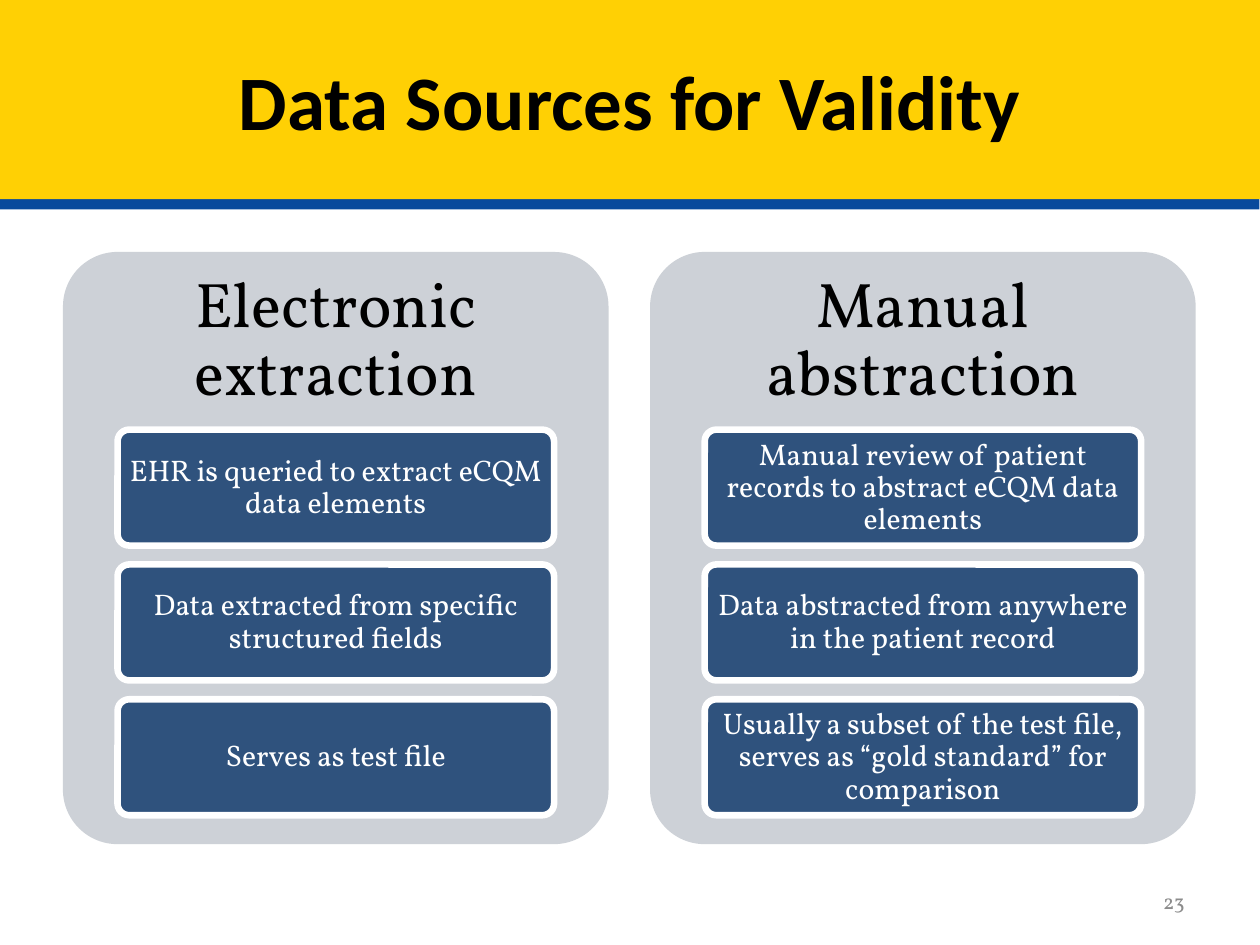
from dataclasses import dataclass

from lxml import etree
from pptx import Presentation
from pptx.dml.color import RGBColor
from pptx.enum.shapes import MSO_SHAPE
from pptx.enum.text import MSO_ANCHOR, PP_ALIGN
from pptx.oxml.ns import qn
from pptx.util import Inches, Pt

ROUND = MSO_SHAPE.ROUNDED_RECTANGLE
MIDDLE = MSO_ANCHOR.MIDDLE
CENTER, RIGHT = PP_ALIGN.CENTER, PP_ALIGN.RIGHT


@dataclass(frozen=True)
class Theme:
    gold: str = "FFD004"
    blue: str = "084A9C"
    panel: str = "CDD1D7"
    card: str = "2F527D"
    black: str = "000000"
    white: str = "FFFFFF"
    gray: str = "8C8C8C"
    head: str = "Calibri"
    body: str = "Vollkorn"
    title: int = 44
    group: int = 36
    item: int = 17
    number: int = 12


@dataclass(frozen=True)
class Box:
    """A rectangle in inches."""
    x: float
    y: float
    w: float
    h: float

    def place(self) -> list:
        return [Inches(v) for v in (self.x, self.y, self.w, self.h)]


@dataclass(frozen=True)
class Group:
    head: str
    items: tuple


THEME = Theme()
WIDE, HIGH = 10, 7.5
BAND = Box(0, 0, WIDE, 1.58)
PANEL = Box(0.5, 2, 4.33, 4.7)
HEAD = 0.3 * PANEL.h
INDENT = 0.1 * PANEL.w
CARD_W = 0.8 * PANEL.w
CARD_H = 0.92
COL_STEP = 4.66
ROW_STEP = 1.07

GROUPS = (
    Group("Electronic extraction", (
        "EHR is queried to extract eCQM data elements",
        "Data extracted from specific structured fields",
        "Serves as test file")),
    Group("Manual abstraction", (
        "Manual review of patient records to abstract eCQM data elements",
        "Data abstracted from anywhere in the patient record",
        "Usually a subset of the test file, serves as “gold standard” "
        "for comparison")),
)


def write(shape, text: str, size: int, color: str, face: str = THEME.body,
          align=CENTER, pad: tuple = (0.1, 0.05), space: float = 1,
          bold: bool = False) -> None:
    frame = shape.text_frame
    frame.word_wrap = True
    frame.vertical_anchor = MIDDLE
    frame.margin_left = frame.margin_right = Inches(pad[0])
    frame.margin_top = frame.margin_bottom = Inches(pad[1])
    frame.text = text
    line = frame.paragraphs[0]
    line.alignment = align
    line.line_spacing = space
    line.font.name = face
    line.font.size = Pt(size)
    line.font.bold = bold
    line.font.color.rgb = RGBColor.from_string(color)


def paint(shape, color: str) -> None:
    shape.fill.solid()
    shape.fill.fore_color.rgb = RGBColor.from_string(color)


def add_round(slide, box: Box, color: str):
    shape = slide.shapes.add_shape(ROUND, *box.place())
    shape.adjustments[0] = 0.1
    shape.shadow.inherit = False
    paint(shape, color)
    shape.line.fill.background()
    return shape


def add_edge(shape, color: str) -> None:
    """Add a hard shadow that shows as a strip below the shape."""
    props = shape._element.spPr
    effects = etree.SubElement(props, qn("a:effectLst"))
    shadow = etree.SubElement(effects, qn("a:outerShdw"), blurRad="0",
                              dist=str(Pt(6)), dir=str(94 * 60000),
                              algn="t", rotWithShape="0")
    etree.SubElement(shadow, qn("a:srgbClr"), val=color)


def add_title(slide, text: str) -> None:
    title = slide.shapes.title
    title.left, title.top, title.width, title.height = BAND.place()
    paint(title, THEME.gold)
    add_edge(title, THEME.blue)
    write(title, text, THEME.title, THEME.black, THEME.head, bold=True)


def add_card(slide, box: Box, text: str) -> None:
    card = add_round(slide, box, THEME.card)
    card.line.color.rgb = RGBColor.from_string(THEME.white)
    card.line.width = Pt(3.78)
    write(card, text, THEME.item, THEME.white, pad=(0.05, 0.04), space=0.9)


def add_group(slide, col: int, group: Group) -> None:
    left = PANEL.x + col * COL_STEP
    add_round(slide, Box(left, PANEL.y, PANEL.w, PANEL.h), THEME.panel)
    head = slide.shapes.add_textbox(
        *Box(left, PANEL.y, PANEL.w, HEAD).place())
    write(head, group.head, THEME.group, THEME.black,
          pad=(0.15, 0.15), space=0.9)
    for row, text in enumerate(group.items):
        top = PANEL.y + HEAD + row * ROW_STEP
        add_card(slide, Box(left + INDENT, top, CARD_W, CARD_H), text)


def main() -> None:
    deck = Presentation()
    deck.slide_width, deck.slide_height = Inches(WIDE), Inches(HIGH)
    slide = deck.slides.add_slide(deck.slide_layouts[5])
    add_title(slide, "Data Sources for Validity")
    for col, group in enumerate(GROUPS):
        add_group(slide, col, group)
    number = slide.shapes.add_textbox(*Box(7.17, 6.95, 2.33, 0.4).place())
    write(number, "23", THEME.number, THEME.gray, align=RIGHT)
    deck.save("out.pptx")


if __name__ == "__main__":
    main()
